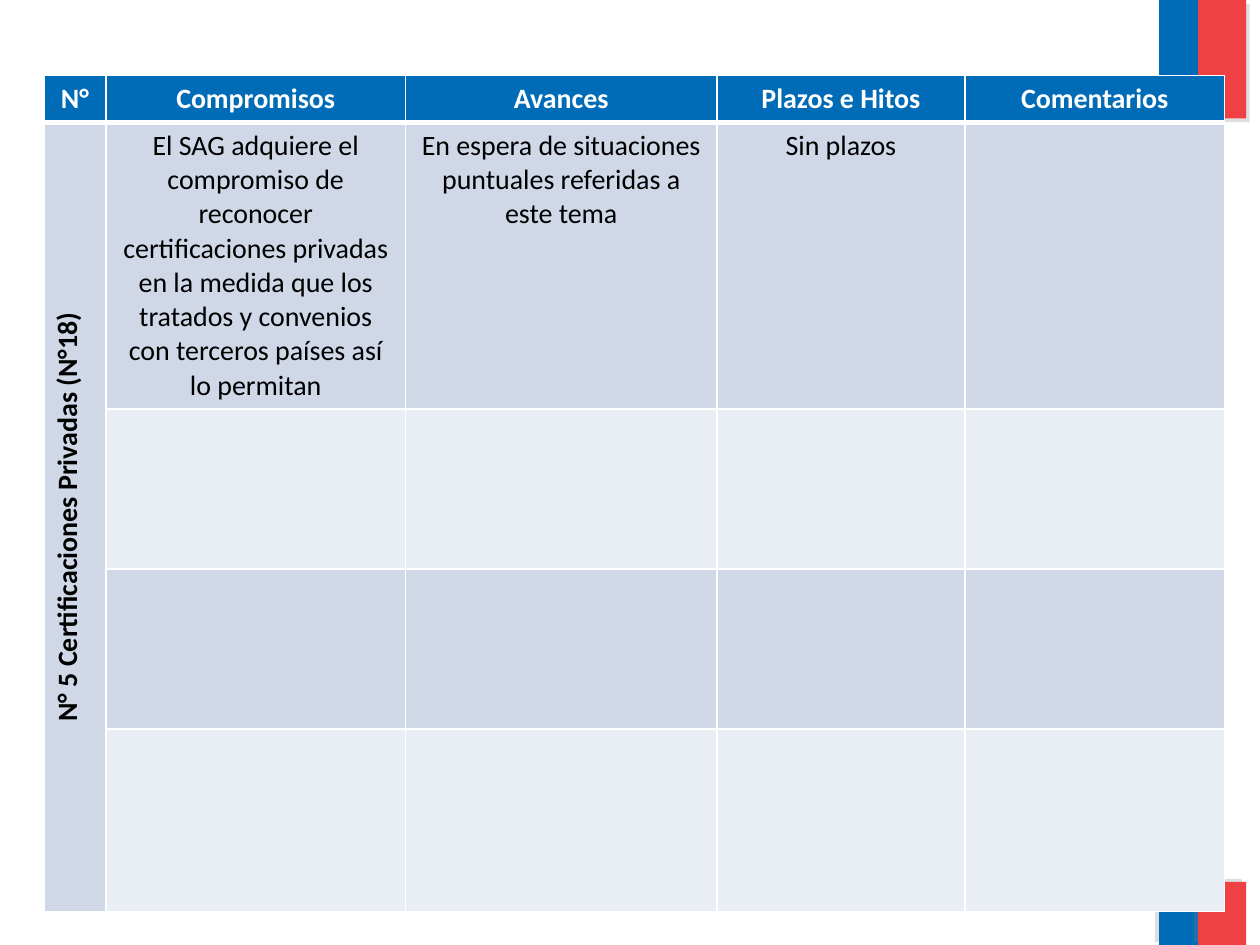
"""Build a slide with a commitments table and coloured corner bands."""
from dataclasses import dataclass

from lxml.etree import SubElement
from pptx import Presentation
from pptx.dml.color import RGBColor
from pptx.enum.shapes import MSO_SHAPE
from pptx.enum.text import PP_ALIGN
from pptx.oxml.ns import qn
from pptx.util import Inches, Pt

BLUE, RED, WHITE, BLACK = "006CB7", "EF4144", "FFFFFF", "000000"
DARK_BAND, LIGHT_BAND = "D0D8E8", "E9EDF4"
COLUMN_WIDTHS = (0.49, 2.38, 2.47, 1.97, 2.06)
ROW_HEIGHTS = (0.37, 2.26, 1.27, 1.27, 1.45)
ROWS = (
    ("N°", "Compromisos", "Avances", "Plazos e Hitos", "Comentarios"),
    (
        "N° 5 Certificaciones Privadas (N°18)",
        "El SAG adquiere el compromiso de reconocer certificaciones privadas "
        "en la medida que los tratados y convenios con terceros países así lo permitan",
        "En espera de situaciones puntuales referidas a este tema",
        "Sin plazos",
        "",
    ),
)


@dataclass
class CornerBand:
    left: float
    top: float
    width: float
    height: float
    color: str
    shadow_angle: int


BANDS = (
    CornerBand(9.2, -0.01, 0.31, 0.95, BLUE, 45),
    CornerBand(9.51, 0, 0.38, 0.94, RED, 45),
    CornerBand(9.2, 7, 0.31, 0.5, BLUE, 215),
    CornerBand(9.51, 7, 0.38, 0.5, RED, 215),
)


def set_fill(target, color: str) -> None:
    target.fill.solid()
    target.fill.fore_color.rgb = RGBColor.from_string(color)


def draw_band(slide, band: CornerBand) -> None:
    shape = slide.shapes.add_shape(
        MSO_SHAPE.RECTANGLE,
        *(Inches(value) for value in (band.left, band.top, band.width, band.height)),
    )
    set_fill(shape, band.color)
    shape.line.fill.background()
    shape.shadow.inherit = False
    effects = shape.element.spPr.find(qn("a:effectLst"))
    shadow = SubElement(effects, qn("a:outerShdw"), dist=str(Pt(3)),
                        dir=str(band.shadow_angle * 60000), rotWithShape="0")
    shadow_color = SubElement(shadow, qn("a:srgbClr"), val="808080")
    SubElement(shadow_color, qn("a:alpha"), val="25000")


def set_border(cell, side: str, width: float) -> None:
    properties = cell._tc.get_or_add_tcPr()
    line = SubElement(properties, qn(f"a:ln{side}"), w=str(Pt(width)))
    fill = SubElement(line, qn("a:solidFill"))
    SubElement(fill, qn("a:srgbClr"), val=WHITE)


def write_text(cell, text: str, color: str, bold: bool) -> None:
    paragraph = cell.text_frame.paragraphs[0]
    paragraph.alignment = PP_ALIGN.CENTER
    run = paragraph.add_run()
    run.text = text
    run.font.name = "Calibri"
    run.font.size = Pt(16)
    run.font.bold = bold
    run.font.color.rgb = RGBColor.from_string(color)


def format_cell(cell, row: int, column: int) -> None:
    header = row == 0
    for side in "LRTB":
        thick = (header and side == "B") or (row == 1 and side == "T")
        set_border(cell, side, 3 if thick else 1)
    if header:
        color = BLUE
    else:
        color = DARK_BAND if row % 2 or column == 0 else LIGHT_BAND
    set_fill(cell, color)
    text = ROWS[row][column] if row < len(ROWS) else ""
    if text:
        write_text(cell, text, WHITE if header else BLACK, header or column == 0)


def draw_table(slide) -> None:
    table = slide.shapes.add_table(
        len(ROW_HEIGHTS), len(COLUMN_WIDTHS), Inches(0.35), Inches(0.6),
        Inches(sum(COLUMN_WIDTHS)), Inches(sum(ROW_HEIGHTS)),
    ).table
    for column, width in zip(table.columns, COLUMN_WIDTHS):
        column.width = Inches(width)
    for row, height in zip(table.rows, ROW_HEIGHTS):
        row.height = Inches(height)
    for row in range(len(ROW_HEIGHTS)):
        for column in range(len(COLUMN_WIDTHS)):
            format_cell(table.cell(row, column), row, column)
    topic = table.cell(1, 0)
    topic.merge(table.cell(len(ROW_HEIGHTS) - 1, 0))
    topic._tc.get_or_add_tcPr().set("vert", "vert270")


def main() -> None:
    presentation = Presentation()
    presentation.slide_width = Inches(10)
    presentation.slide_height = Inches(7.5)
    slide = presentation.slides.add_slide(presentation.slide_layouts[6])
    set_fill(slide.background, WHITE)
    for band in BANDS:
        draw_band(slide, band)
    draw_table(slide)
    presentation.save("out.pptx")


if __name__ == "__main__":
    main()
